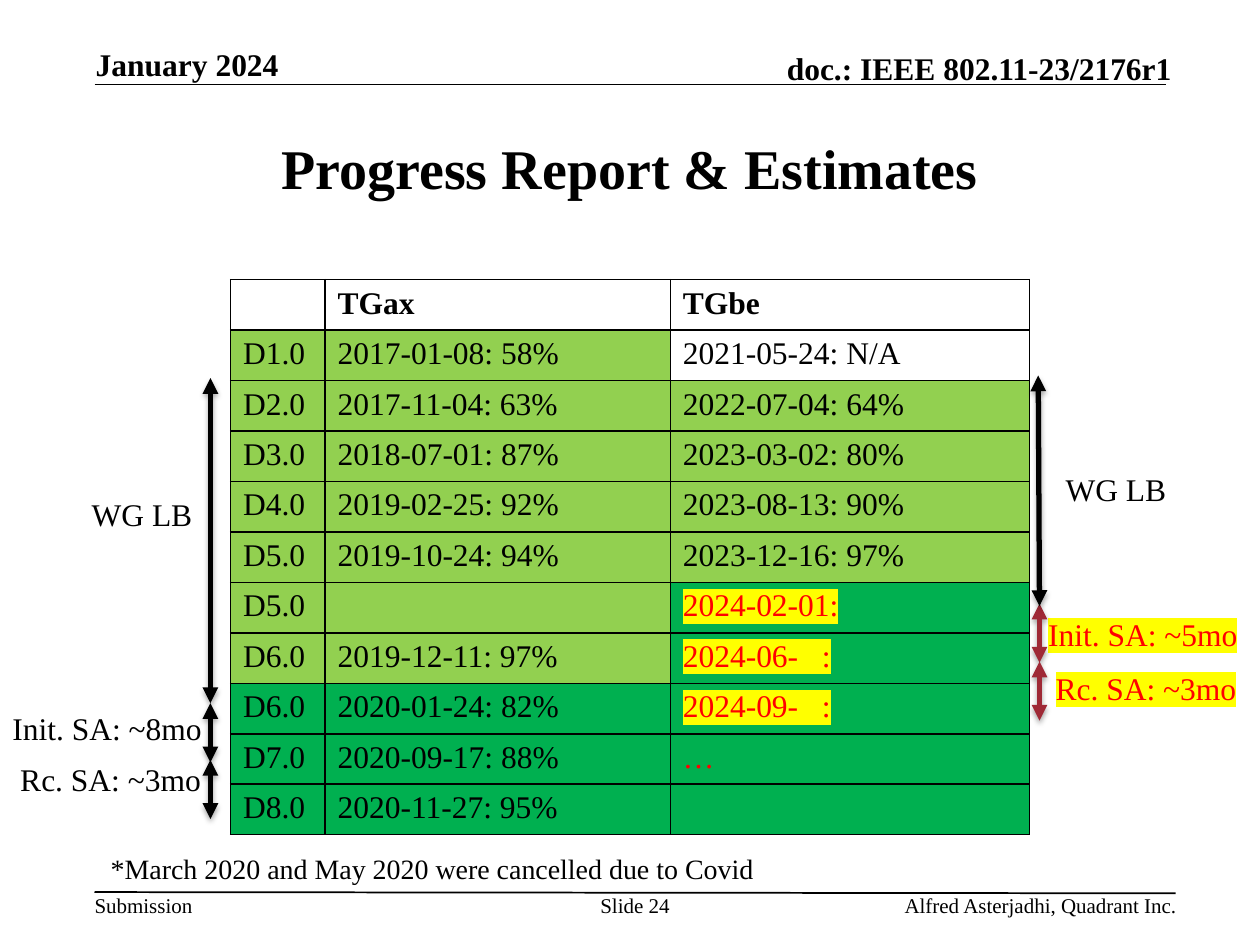
"""Build the progress report slide: a ballot table flanked by phase arrows."""
from lxml.etree import SubElement
from pptx import Presentation
from pptx.dml.color import RGBColor
from pptx.enum.shapes import MSO_CONNECTOR as CONN, MSO_SHAPE as SHAPE
from pptx.enum.text import MSO_ANCHOR as ANCHOR, PP_ALIGN as ALIGN
from pptx.oxml import parse_xml
from pptx.oxml.ns import nsdecls, qn
from pptx.util import Inches, Pt

COLS, ROWS = 1000, 750
FONT = "Times New Roman"
COLORS = {"black": "000000", "white": "FFFFFF", "light": "92D050", "dark": "00B050",
          "red": "FF0000", "yellow": "FFFF00", "crimson": "9F2936"}

FRAME = [
    ("January 2024", (76, 36, 205, 30), dict(size=18, bold=True, anchor=ANCHOR.BOTTOM)),
    ("doc.: IEEE 802.11-23/2176r1", (547, 39, 383, 30),
     dict(size=18, bold=True, align=ALIGN.RIGHT, anchor=ANCHOR.BOTTOM)),
    ("Progress Report & Estimates", (75, 75, 850, 116),
     dict(size=32, bold=True, align=ALIGN.CENTER, anchor=ANCHOR.MIDDLE, inset=True)),
    ("Submission", (75, 708, 78, 20), dict(size=12, wrap=False)),
    ("Slide 24", (475, 708, 58, 40), dict(size=12, align=ALIGN.CENTER)),
    ("Alfred Asterjadhi, Quadrant Inc.", (586, 708, 348, 20), dict(size=12, align=ALIGN.RIGHT)),
    ("*March 2020 and May 2020 were cancelled due to Covid", (78, 671, 858, 37),
     dict(size=16, inset=True)),
]
RULES = [(75, 67, 925, 67), (75, 708, 933, 709)]

TABLE = [
    ("", "TGax", "TGbe"),
    ("D1.0", "2017-01-08: 58%", "2021-05-24: N/A"),
    ("D2.0", "2017-11-04: 63%", "2022-07-04: 64%"),
    ("D3.0", "2018-07-01: 87%", "2023-03-02: 80%"),
    ("D4.0", "2019-02-25: 92%", "2023-08-13: 90%"),
    ("D5.0", "2019-10-24: 94%", "2023-12-16: 97%"),
    ("D5.0", "", "2024-02-01:"),
    ("D6.0", "2019-12-11: 97%", "2024-06-   :"),
    ("D6.0", "2020-01-24: 82%", "2024-09-   :"),
    ("D7.0", "2020-09-17: 88%", "…"),
    ("D8.0", "2020-11-27: 95%", ""),
]
TABLE_AT, TABLE_COLS, TABLE_ROW = (183, 222), (75, 274, 285), 40
FIRST_LIGHT, FIRST_DARK = (1, 1, 2), (8, 8, 6)

ESTIMATE = dict(color="red", highlight="yellow")
LABELS = [
    ("Init. SA: ~8mo", (0, 558, 181), {}),
    (" Rc. SA: ~3mo", (0, 598, 181), {}),
    ("Init. SA: ~5mo", (822, 483, 172), ESTIMATE),
    ("Rc. SA: ~3mo", (828, 526, 167), ESTIMATE),
    ("WG LB", (63, 388, 100), {}),
    ("WG LB", (836, 368, 100), {}),
]
ARROWS = [
    ((167, 558, 167, 605), "black"), ((167, 603, 167, 650), "black"),
    ((825, 479, 825, 526), "crimson"), ((825, 525, 825, 572), "crimson"),
    ((167, 300, 167, 558), "black"), ((824, 298, 825, 481), "black"),
]


def rgb(name):
    return RGBColor.from_string(COLORS[name])


def write(tf, text, size=18, bold=False, color="black", highlight=None, align=ALIGN.LEFT,
          anchor=ANCHOR.TOP, wrap=True):
    tf.word_wrap, tf.vertical_anchor = wrap, anchor
    p = tf.paragraphs[0]
    p.alignment = align
    if not text:
        p.font.size = Pt(size)
        return
    r = p.add_run()
    r.text = text
    r.font.size, r.font.bold, r.font.name = Pt(size), bold, FONT
    r.font.color.rgb = rgb(color)
    if highlight:
        r.font._element.find(qn("a:latin")).addprevious(parse_xml(
            f'<a:highlight {nsdecls("a")}><a:srgbClr val="{COLORS[highlight]}"/></a:highlight>'))


def add_text(slide, text, at, inset=False, **fmt):
    tf = slide.shapes.add_textbox(*grid(*at)).text_frame
    if not inset:
        tf.margin_left = tf.margin_right = tf.margin_top = tf.margin_bottom = 0
    write(tf, text, **fmt)


def add_label(slide, text, at, fmt):
    s = slide.shapes.add_shape(SHAPE.RECTANGLE, *grid(*at, TABLE_ROW))
    s.shadow.inherit = False
    s.fill.solid()
    s.fill.fore_color.rgb = s.line.color.rgb = rgb("white")
    s.line.width = Pt(0.75)
    write(s.text_frame, text, **fmt)


def add_line(slide, ends, color="black", width=1, arrow=False):
    s = slide.shapes.add_connector(CONN.STRAIGHT, *grid(*ends))
    s.line.color.rgb, s.line.width = rgb(color), Pt(width)
    effects = SubElement(s._element.spPr, qn("a:effectLst"))
    if arrow:
        for end in ("a:headEnd", "a:tailEnd"):
            SubElement(s.line._get_or_add_ln(), qn(end), type="triangle")
        effects.append(parse_xml(
            f'<a:outerShdw {nsdecls("a")} blurRad="{Pt(3.1)}" dist="{Pt(1.8)}" dir="5400000" '
            'rotWithShape="0"><a:srgbClr val="000000"><a:alpha val="35000"/></a:srgbClr>'
            '</a:outerShdw>'))


def add_cell_borders(cell):
    tcPr = cell._tc.get_or_add_tcPr()
    for i, side in enumerate("LRTB"):
        tcPr.insert(i, parse_xml(
            f'<a:ln{side} {nsdecls("a")} w="{Pt(1)}"><a:solidFill>'
            f'<a:srgbClr val="{COLORS["black"]}"/></a:solidFill></a:ln{side}>'))


def add_progress_table(slide):
    size = (sum(TABLE_COLS), TABLE_ROW * len(TABLE))
    table = slide.shapes.add_table(len(TABLE), len(TABLE_COLS), *grid(*TABLE_AT, *size)).table
    for column, width in zip(table.columns, TABLE_COLS):
        column.width = grid(width)[0]
    for i, row in enumerate(TABLE):
        for j, text in enumerate(row):
            cell = table.cell(i, j)
            fill = "dark" if i >= FIRST_DARK[j] else "light" if i >= FIRST_LIGHT[j] else "white"
            cell.fill.solid()
            cell.fill.fore_color.rgb = rgb(fill)
            planned = j == 2 and fill == "dark"
            write(cell.text_frame, text, bold=i == 0, color="red" if planned else "black",
                  highlight="yellow" if planned and text != "…" else None)
            add_cell_borders(cell)


def grid(*cells):
    """Turn alternating column and row counts into lengths."""
    units = prs.slide_width / COLS, prs.slide_height / ROWS
    return [round(n * units[i % 2]) for i, n in enumerate(cells)]


prs = Presentation()
prs.slide_width, prs.slide_height = Inches(10), Inches(7.5)
slide = prs.slides.add_slide(prs.slide_layouts[6])
for ends in RULES:
    add_line(slide, ends)
for text, at, fmt in FRAME:
    add_text(slide, text, at, **fmt)
add_progress_table(slide)
for text, at, fmt in LABELS:
    add_label(slide, text, at, fmt)
for ends, color in ARROWS:
    add_line(slide, ends, color, width=3, arrow=True)
prs.save("out.pptx")
